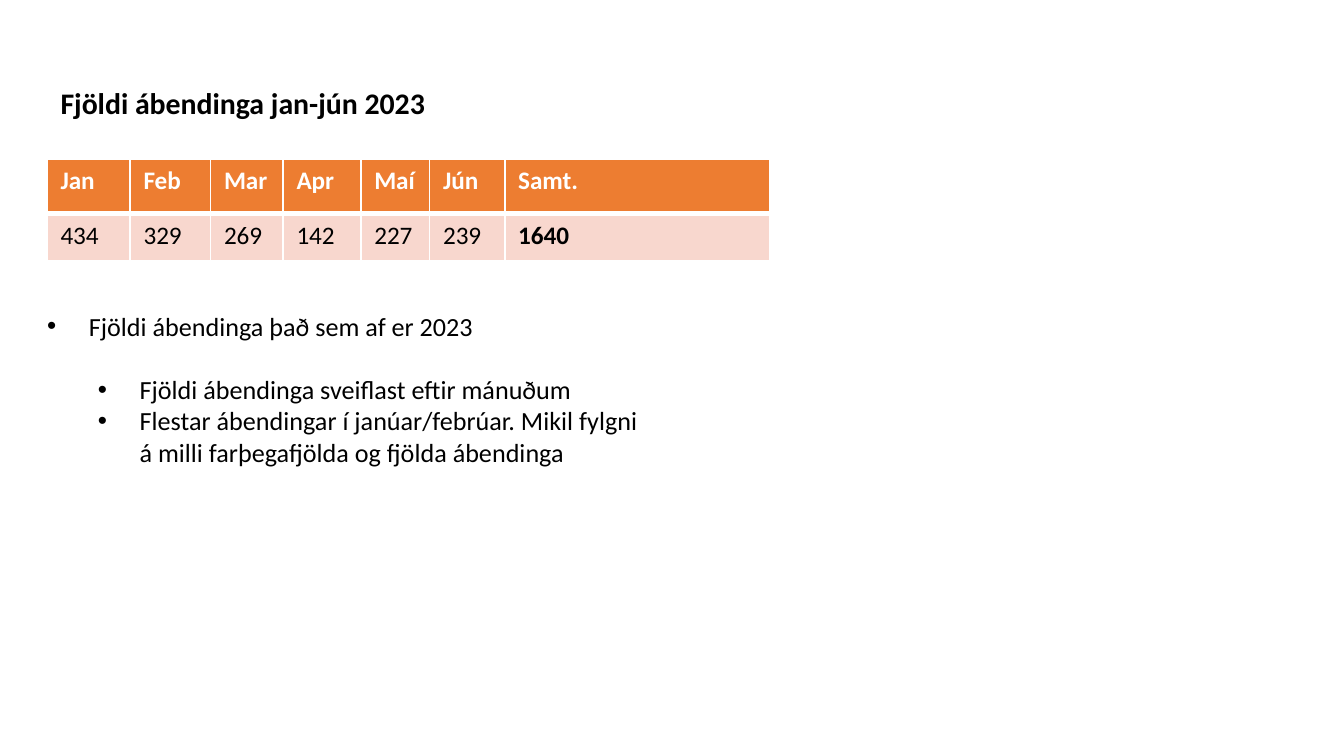
from lxml import etree
from pptx import Presentation
from pptx.dml.color import RGBColor
from pptx.enum.text import MSO_ANCHOR, PP_ALIGN
from pptx.oxml.ns import qn
from pptx.util import Cm, Pt

LEFT, TOP = PP_ALIGN.LEFT, MSO_ANCHOR.TOP
HUES = {"head": "ED7D31", "body": "F8D7CE", "line": "FFFFFF", "ink": "000000"}


def write(para, text, size=14, bold=False, hue="ink", before=0):
    para.alignment = LEFT
    para.space_before = Pt(before)
    para.line_spacing = 1.0
    run = para.add_run()
    run.text = text
    run.font.name = "Calibri"
    run.font.size = Pt(size)
    run.font.bold = bold
    run.font.color.rgb = RGBColor.from_string(HUES[hue])


def edge(cell, widths):
    """Draw the left, right, top and bottom cell borders, widths in points."""
    props = cell._tc.get_or_add_tcPr()
    for spot, (side, width) in enumerate(zip("LRTB", widths)):
        line = etree.Element(qn(f"a:ln{side}"), w=str(Pt(width)))
        fill = etree.SubElement(line, qn("a:solidFill"))
        etree.SubElement(fill, qn("a:srgbClr"), val=HUES["line"])
        props.insert(spot, line)


prs = Presentation()
prs.slide_width, prs.slide_height = Cm(25.4), Cm(14.29)
slide = prs.slides.add_slide(prs.slide_layouts[5])

# Title
title = slide.shapes.title
title.left, title.top, title.width, title.height = Cm(0.89), Cm(1.47), Cm(19.86), Cm(0.94)
title.text_frame.vertical_anchor = TOP
write(title.text_frame.paragraphs[0], "Fjöldi ábendinga jan-jún 2023", size=16, bold=True)

# Monthly table
months = ["Jan", "Feb", "Mar", "Apr", "Maí", "Jún"]
counts = [434, 329, 269, 142, 227, 239]
rows = [months + ["Samt."], counts + [sum(counts)]]
widths = [1.57, 1.52, 1.37, 1.47, 1.3, 1.42, 5]
heights = [1.04, 0.89]
table = slide.shapes.add_table(
    len(rows), len(widths), Cm(0.89), Cm(3), Cm(sum(widths)), Cm(sum(heights))
).table
for col, width in zip(table.columns, widths):
    col.width = Cm(width)
for row, height in zip(table.rows, heights):
    row.height = Cm(height)

for r, row in enumerate(rows):
    head = r == 0
    for c, value in enumerate(row):
        cell = table.cell(r, c)
        cell.fill.solid()
        cell.fill.fore_color.rgb = RGBColor.from_string(HUES["head" if head else "body"])
        edge(cell, (1, 1, 1, 3) if head else (1, 1, 3, 1))
        write(cell.text_frame.paragraphs[0], str(value), size=13.5,
              bold=head or c == len(months), hue="line" if head else "ink")

# Bullet list: level, space before, text
points = [
    (0, 0, "Fjöldi ábendinga það sem af er 2023"),
    (1, 17, "Fjöldi ábendinga sveiflast eftir mánuðum"),
    (1, 0, "Flestar ábendingar í janúar/febrúar. Mikil fylgni á milli farþegafjölda og fjölda ábendinga"),
]
frame = slide.shapes.add_textbox(Cm(0.64), Cm(5.74), Cm(11.76), Cm(5.31)).text_frame
frame.word_wrap = True
for i, (level, gap, text) in enumerate(points):
    para = frame.add_paragraph() if i else frame.paragraphs[0]
    para.level = level
    props = para._p.get_or_add_pPr()
    props.set("marL", str(Cm(0.79 + 0.96 * level)))
    props.set("indent", str(Cm(-0.79)))
    etree.SubElement(props, qn("a:buFont"), typeface="Arial")
    etree.SubElement(props, qn("a:buChar"), char="•")
    write(para, text, before=gap)

prs.save("out.pptx")
